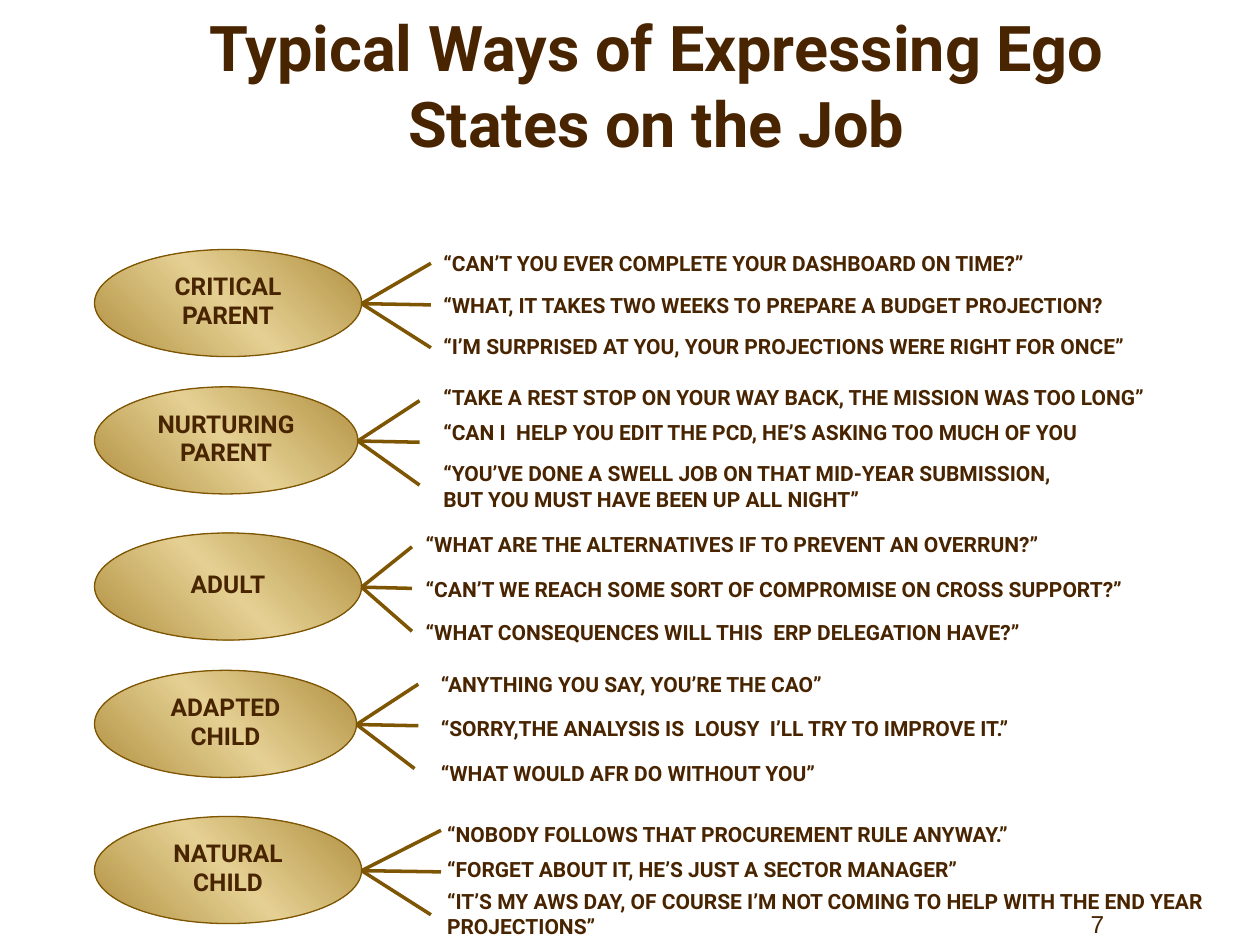
from copy import deepcopy

from lxml import etree
from pptx import Presentation
from pptx import util as u
from pptx.dml.color import RGBColor
from pptx.enum import shapes, text
from pptx.oxml.ns import qn

PX = 9144  # 100 px to the inch
COLORS = {"ink": "482400", "line": "7E5502", "edge": "B09040", "glow": "E5D093"}
RGB = {name: RGBColor.from_string(value) for name, value in COLORS.items()}

STATE_LEFT, STATE_HEIGHT = 75, 85
BRANCH_RISES = (-32, 1, 35)

# state lines, top, width, left of quotes,
# then per quote: end of its branch, top, width, height, words
EGO_STATES = [
    (("CRITICAL", "PARENT"), 198, 212, 342, [
        (342, 194, 592, 30, "“CAN’T YOU EVER COMPLETE YOUR DASHBOARD ON TIME?”"),
        (342, 227, 617, 30, "“WHAT, IT TAKES TWO WEEKS TO PREPARE A BUDGET PROJECTION?"),
        (342, 260, 642, 30, "“I’M SURPRISED AT YOU, YOUR PROJECTIONS WERE RIGHT FOR ONCE”"),
    ]),
    (("NURTURING", "PARENT"), 307, 209, 342, [
        (333, 300, 650, 30, "“TAKE A REST STOP ON YOUR WAY BACK, THE MISSION WAS TOO LONG”"),
        (333, 328, 583, 30, "“CAN I  HELP YOU EDIT THE PCD, HE’S ASKING TOO MUCH OF YOU"),
        (333, 361, 507, 70, "“YOU’VE DONE A SWELL JOB ON THAT MID-YEAR SUBMISSION, "
                            "BUT YOU MUST HAVE BEEN UP ALL NIGHT”"),
    ]),
    (("ADULT",), 423, 212, 328, [
        (327, 417, 825, 30, "“WHAT ARE THE ALTERNATIVES IF TO PREVENT AN OVERRUN?”"),
        (327, 453, 825, 50, "“CAN’T WE REACH SOME SORT OF COMPROMISE ON CROSS SUPPORT?”"),
        (327, 487, 825, 30, "“WHAT CONSEQUENCES WILL THIS  ERP DELEGATION HAVE?”"),
    ]),
    (("ADAPTED", "CHILD"), 532, 208, 340, [
        (332, 528, 825, 30, "“ANYTHING YOU SAY, YOU’RE THE CAO”"),
        (332, 563, 825, 30, "“SORRY,THE ANALYSIS IS  LOUSY  I’LL TRY TO IMPROVE IT.”"),
        (329, 599, 542, 33, "“WHAT WOULD AFR DO WITHOUT YOU”"),
    ]),
    (("NATURAL", "CHILD"), 648, 212, 345, [
        (350, 647, 825, 30, "“NOBODY FOLLOWS THAT PROCUREMENT RULE ANYWAY.”"),
        (350, 675, 667, 30, "“FORGET ABOUT IT, HE’S JUST A SECTOR MANAGER”"),
        (342, 700, 667, 50, "“IT’S MY AWS DAY, OF COURSE I’M NOT COMING TO HELP WITH THE "
                            "END YEAR PROJECTIONS”"),
    ]),
]


def px(*lengths):
    return [u.Emu(length * PX) for length in lengths]


def write(frame, lines, size, align, anchor, font="Roboto", bold=True):
    """Fill a text frame with one paragraph per line, all in one style."""
    frame.word_wrap = True
    frame.auto_size = text.MSO_AUTO_SIZE.NONE
    frame.vertical_anchor = anchor
    frame.text = "\n".join(lines)
    for paragraph in frame.paragraphs:
        paragraph.alignment = align
        paragraph.font.name = font
        paragraph.font.size = u.Pt(size)
        paragraph.font.bold = bold
        paragraph.font.color.rgb = RGB["ink"]


prs = Presentation()
prs.slide_width, prs.slide_height = px(1000, 750)
slide = prs.slides.add_slide(prs.slide_layouts[5])
CENTER, LEFT = text.PP_ALIGN.CENTER, text.PP_ALIGN.LEFT
TOP, MIDDLE, BOTTOM = text.MSO_ANCHOR.TOP, text.MSO_ANCHOR.MIDDLE, text.MSO_ANCHOR.BOTTOM

title = slide.shapes.title
title.left, title.top, title.width, title.height = px(100, 42, 842, 90)
write(title.text_frame, ["Typical Ways of Expressing Ego States on the Job"], 36, CENTER, BOTTOM)

page_number = slide.shapes.add_textbox(*px(767, 700, 208, 50))
write(page_number.text_frame, ["7"], 14, CENTER, BOTTOM, font="Arial", bold=False)

for name, top, width, quote_left, quotes in EGO_STATES:
    state = slide.shapes.add_shape(shapes.MSO_SHAPE.OVAL, *px(STATE_LEFT, top, width, STATE_HEIGHT))
    state.shadow.inherit = False
    state.line.color.rgb = RGB["line"]
    state.line.width = u.Pt(0.75)

    state.fill.gradient()
    state.fill.gradient_angle = 45
    for stop in state.fill.gradient_stops:
        stop.color.rgb = RGB["edge"]
    stops = state._element.spPr.find(".//" + qn("a:gsLst"))
    middle = deepcopy(stops[0])
    middle.set("pos", "50000")
    middle[0].set("val", COLORS["glow"])
    stops.insert(1, middle)

    write(state.text_frame, name, 14, CENTER, MIDDLE)
    for index, paragraph in enumerate(state.text_frame.paragraphs):
        paragraph.line_spacing = 0.8
        if index:
            paragraph.space_before = u.Pt(2.8)

    hub_x, hub_y = STATE_LEFT + width, top + 43
    for rise, (tip_x, quote_top, quote_width, quote_height, words) in zip(BRANCH_RISES, quotes):
        branch = slide.shapes.add_connector(
            shapes.MSO_CONNECTOR.STRAIGHT, *px(hub_x, hub_y, tip_x, hub_y + rise))
        branch.line.color.rgb = RGB["line"]
        branch.line.width = u.Pt(2)
        etree.SubElement(branch._element.spPr, qn("a:effectLst"))

        quote = slide.shapes.add_textbox(*px(quote_left, quote_top, quote_width, quote_height))
        write(quote.text_frame, [words], 12, LEFT, TOP)

prs.save("out.pptx")
